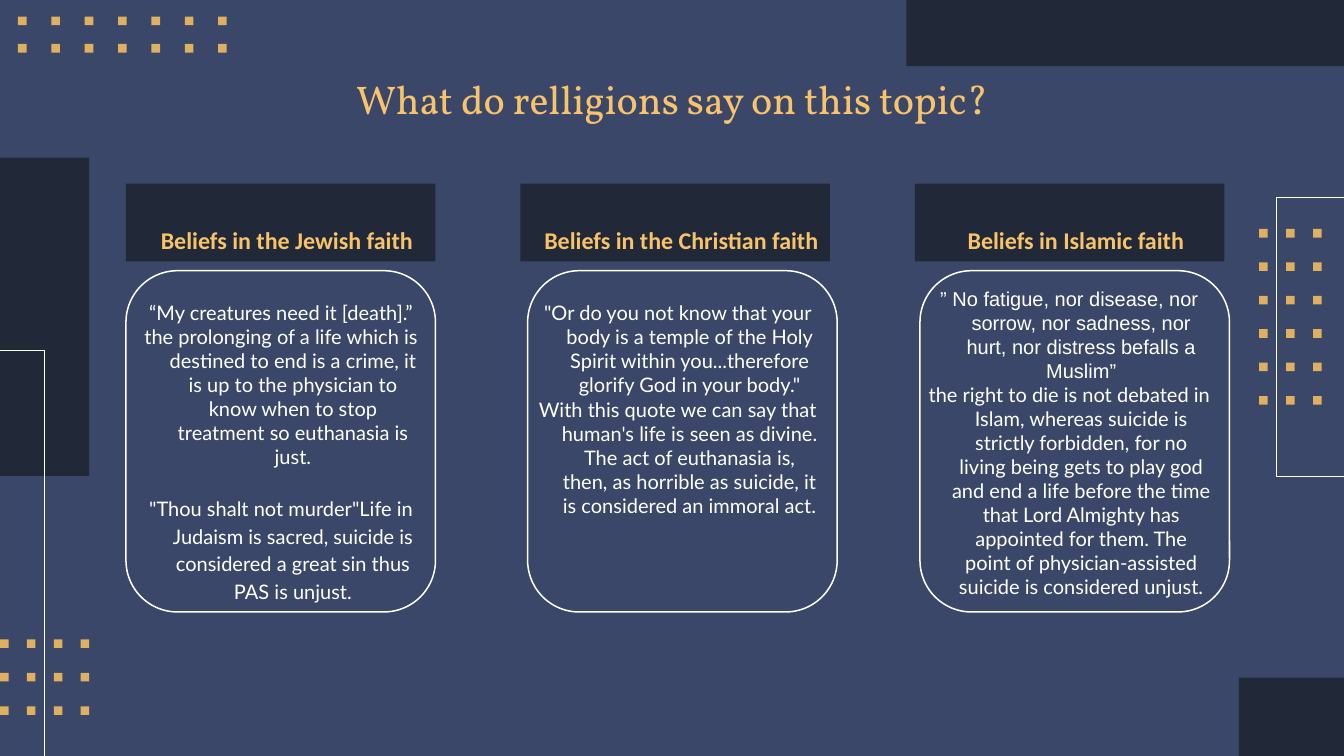
import pptx
import pptx.dml.color
import pptx.enum.shapes
import pptx.enum.text
import pptx.util

Inches = pptx.util.Inches
Pt = pptx.util.Pt
SHAPE = pptx.enum.shapes.MSO_SHAPE
ANCHOR = pptx.enum.text.MSO_ANCHOR
CENTER = pptx.enum.text.PP_ALIGN.CENTER

WIDE, HIGH = 18.67, 10.5
DOT = 0.12
COLORS = {"back": "3A4769", "dark": "212838", "dot": "DFB05F",
          "gold": "F8C36A", "white": "FFFFFF"}

# Each card: heading, frame left, text left, text top, text height, paragraphs
CARDS = [
    ("Beliefs in the Jewish faith", 1.75, 1.67, 4.08, 4.1, [
        ("“My creatures need it [death].”", {}),
        ("the prolonging of a life which is destined to end is a crime, it is "
         "up to the physician to know when to stop treatment so euthanasia "
         "is just.", {}),
        ("\"Thou shalt not murder\"Life in Judaism is sacred, suicide is "
         "considered a great sin thus PAS is unjust.",
         {"lines": 1.15, "before": 24, "after": 10})]),
    ("Beliefs in the Christian faith", 7.33, 7.18, 4.08, 3.78, [
        ("\"Or do you not know that your body is a temple of the Holy Spirit "
         "within you...therefore glorify God in your body.\"", {}),
        ("With this quote we can say that human's life is seen as divine. The "
         "act of euthanasia is, then, as horrible as suicide, it is "
         "considered an immoral act.", {})]),
    ("Beliefs in Islamic faith", 12.78, 12.62, 3.88, 4.74, [
        ("” No fatigue, nor disease, nor sorrow, nor sadness, nor hurt, nor "
         "distress befalls a Muslim”", {"font": "Arial"}),
        ("the right to die is not debated in Islam, whereas suicide is "
         "strictly forbidden, for no living being gets to play god and end a "
         "life before the time that Lord Almighty has appointed for them. The "
         "point of physician-assisted suicide is considered unjust.", {})]),
]


def color(name):
    return pptx.dml.color.RGBColor.from_string(COLORS[name])


def style(shape, fill=None, line=None, width=0.75):
    shape.shadow.inherit = False
    if fill:
        shape.fill.solid()
        shape.fill.fore_color.rgb = color(fill)
    else:
        shape.fill.background()
    if line:
        shape.line.color.rgb = color(line)
        shape.line.width = Pt(width)
    else:
        shape.line.fill.background()
    return shape


def block(slide, box, kind=SHAPE.RECTANGLE, **look):
    shape = slide.shapes.add_shape(kind, *map(Inches, box))
    return style(shape, **look)


def outline(slide, points):
    """Draw an open white line through the points."""
    first, *rest = [(Inches(x), Inches(y)) for x, y in points]
    path = slide.shapes.build_freeform(*first)
    path.add_line_segments(rest, close=False)
    style(path.convert_to_shape(), line="white")


def frame(shape, inset=0.1, anchor=ANCHOR.TOP):
    """Set wrapping, insets and anchor, and return the text frame."""
    area = shape.text_frame
    area.word_wrap = True
    area.vertical_anchor = anchor
    area.margin_left = area.margin_right = Inches(inset)
    area.margin_top = area.margin_bottom = Inches(inset)
    return area


def write(para, text, font="Lato", size=20, ink="white", bold=False,
          hang=True, lines=1.0, before=0, after=0):
    run = para.add_run()
    run.text = text
    run.font.name = font
    run.font.size = Pt(size)
    run.font.bold = bold
    run.font.color.rgb = color(ink)
    para.alignment = CENTER
    para.line_spacing = lines
    para.space_before, para.space_after = Pt(before), Pt(after)
    if hang:
        props = para._p.get_or_add_pPr()
        props.set("marL", str(Inches(0.5)))
        props.set("indent", str(Inches(-0.33)))


def dots(slide, box, cols, rows):
    """Spread a grid of small squares evenly over the box."""
    left, top, width, height = box
    across = (width - DOT) / (cols - 1)
    down = (height - DOT) / (rows - 1)
    for row in range(rows):
        for col in range(cols):
            place = (left + col * across, top + row * down, DOT, DOT)
            block(slide, place, fill="dot")


def decor(slide, width, height):
    """Place the corner blocks, open outlines and dot grids."""
    for box in [(width - 1.46, height - 1.09, 1.46, 1.09),
                (width - 6.08, 0, 6.08, 0.92),
                (0, 2.19, 1.24, 4.42)]:
        block(slide, box, fill="dark")
    outline(slide, [(width, 2.74), (17.73, 2.74), (17.73, 6.62), (width, 6.62)])
    outline(slide, [(0.62, height), (0.62, 4.87), (0, 4.87)])
    dots(slide, (0.25, 0.23, 2.9, 0.5), 7, 2)
    dots(slide, (17.49, 3.18, 0.87, 2.44), 3, 6)
    dots(slide, (0, 8.88, 1.24, 1.05), 4, 3)


def title(slide, box, text):
    area = frame(slide.shapes.add_textbox(*map(Inches, box)), inset=0.14)
    write(area.paragraphs[0], text, font="Vollkorn", size=40, ink="gold",
          hang=False)


def header(slide, box, text):
    area = frame(block(slide, box, fill="dark"), anchor=ANCHOR.BOTTOM)
    write(area.paragraphs[0], text, font="Calibri", size=24, ink="gold",
          bold=True, lines=3.0)


def body(slide, box, paras):
    area = frame(slide.shapes.add_textbox(*map(Inches, box)))
    for i, (text, form) in enumerate(paras):
        para = area.add_paragraph() if i else area.paragraphs[0]
        write(para, text, **form)


def cards(slide, box):
    """Lay out three columns, each a heading over a rounded frame of text."""
    left, top, width, height = box
    card = 4.3
    step = (width - card) / (len(CARDS) - 1)
    for i, (head, edge, start, high, tall, paras) in enumerate(CARDS):
        header(slide, (left + i * step, top, card, 1.08), head)
        body(slide, (start, high, card, tall), paras)
        block(slide, (edge, top + height - 4.74, card, 4.74),
              SHAPE.ROUNDED_RECTANGLE, line="white", width=1.5)


def main():
    deck = pptx.Presentation()
    deck.slide_width, deck.slide_height = Inches(WIDE), Inches(HIGH)
    slide = deck.slides.add_slide(deck.slide_layouts[6])
    slide.background.fill.solid()
    slide.background.fill.fore_color.rgb = color("back")
    decor(slide, WIDE, HIGH)
    title(slide, (3.44, 0.9, 11.8, 0.88),
          "What do relligions say on this topic?")
    cards(slide, (1.75, 2.55, 15.26, 5.95))
    deck.save("out.pptx")


if __name__ == "__main__":
    main()
